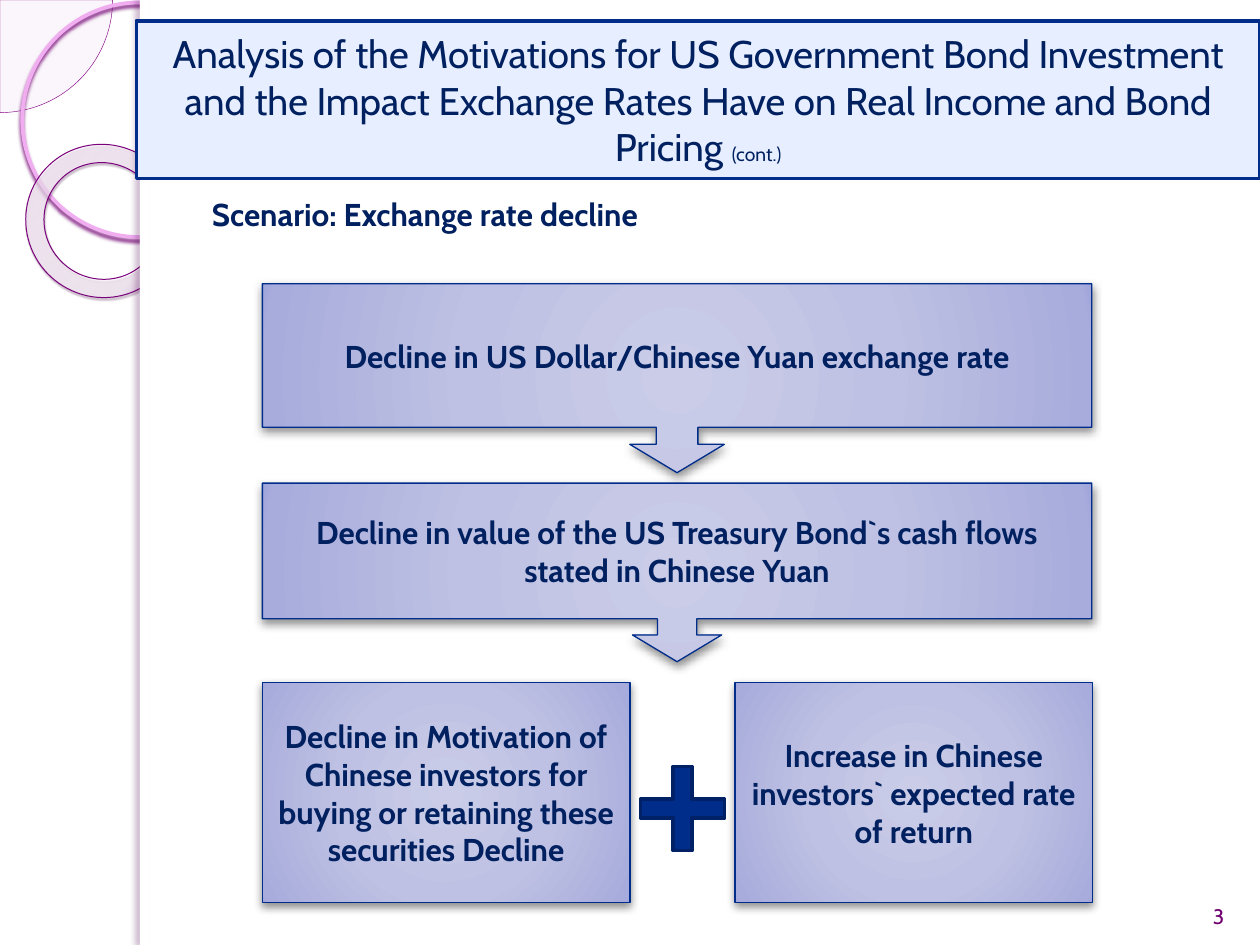
from pptx import Presentation
from pptx import util as u
from pptx.dml.color import RGBColor
from pptx.enum import shapes, text
from pptx.oxml import parse_xml
from pptx.oxml.ns import nsdecls, qn

NAVY = RGBColor(0x00, 0x20, 0x60)
BLUE = RGBColor(0x00, 0x2D, 0x89)
DARK_BLUE = RGBColor(0x00, 0x21, 0x65)
PALE_BLUE = RGBColor(0xE7, 0xEE, 0xFF)
WHITE = RGBColor(0xFF, 0xFF, 0xFF)
PALE_PINK = RGBColor(0xF5, 0xE6, 0xF5)
PINK = RGBColor(0xF0, 0xAE, 0xF0)
PURPLE = RGBColor(0x83, 0x00, 0x83)
RING_LINE = RGBColor(0x7B, 0x00, 0x7B)
PLUM = RGBColor(0x71, 0x00, 0x71)
DEEP_PLUM = RGBColor(0x38, 0x00, 0x38)
EDGE_PLUM = RGBColor(0x4C, 0x00, 0x4C)
BLACK = RGBColor(0x00, 0x00, 0x00)

BOX_STOPS = [(0, RGBColor(0xCB, 0xCD, 0xE8), 100), (50, RGBColor(0xBE, 0xC1, 0xE3), 100),
             (97, RGBColor(0xA8, 0xAC, 0xDC), 100), (100, RGBColor(0x9F, 0xA4, 0xDB), 100)]
RING_STOPS = [(0, RGBColor(0xFB, 0xEE, 0xFB), 70), (70, RGBColor(0xFE, 0xF5, 0xFE), 55),
              (100, RGBColor(0x87, 0x00, 0x87), 60)]
BOX_SHADOW = (BLACK, 43, 5, 2, 90)
FONT = "Cabin"


def add_figure(kind, place, fill=None, line=None, width=0, adjust=(), shadow=None):
    figure = page.shapes.add_shape(kind, *[u.Cm(length) for length in place])
    figure.shadow.inherit = False
    for index, value in enumerate(adjust):
        figure.adjustments[index] = value
    if fill is None:
        figure.fill.background()
    else:
        figure.fill.solid()
        figure.fill.fore_color.rgb = fill
    if line is None:
        figure.line.fill.background()
    else:
        figure.line.color.rgb = line
        figure.line.width = u.Pt(width)
    if shadow:
        color, alpha, blur, distance, angle = shadow
        figure._element.spPr.find(qn("a:effectLst")).append(parse_xml(
            f'<a:outerShdw {nsdecls("a")} blurRad="{u.Pt(blur)}" dist="{u.Pt(distance)}" '
            f'dir="{angle * 60000}" algn="ctr" rotWithShape="0"><a:srgbClr val="{color}">'
            f'<a:alpha val="{alpha * 1000}"/></a:srgbClr></a:outerShdw>'))
    return figure


def fill_radial(figure, stops, focus):
    figure.fill.gradient()
    gradient = figure._element.spPr.find(qn("a:gradFill"))
    marks = "".join(f'<a:gs pos="{position * 1000}"><a:srgbClr val="{color}">'
                    f'<a:alpha val="{alpha * 1000}"/></a:srgbClr></a:gs>'
                    for position, color, alpha in stops)
    left, top, right, bottom = [side * 1000 for side in focus]
    gradient.getparent().replace(gradient, parse_xml(
        f'<a:gradFill {nsdecls("a")} rotWithShape="1"><a:gsLst>{marks}</a:gsLst>'
        f'<a:path path="circle"><a:fillToRect l="{left}" t="{top}" r="{right}" b="{bottom}"/>'
        f'</a:path></a:gradFill>'))


deck = Presentation()
deck.slide_width, deck.slide_height = u.Cm(25.4), u.Cm(19.05)
page = deck.slides.add_slide(deck.slide_layouts[5])
kinds = shapes.MSO_SHAPE

pie = add_figure(kinds.PIE, (-2.27, -2.27, 4.54, 4.54), PALE_PINK, PURPLE, 0.25, (0, 54.02))
pie_color = pie._element.spPr.find(qn("a:solidFill")).find(qn("a:srgbClr"))
pie_color.append(parse_xml(f'<a:alpha {nsdecls("a")} val="33000"/>'))
add_figure(kinds.OVAL, (0.45, 0.05, 4.73, 4.73), None, PINK, 2.15,
           shadow=(PLUM, 85, 2, 2, 90))
ring = add_figure(kinds.DONUT, (0.51, 2.92, 3.12, 3.07), PALE_PINK, RING_LINE, 0.58, (0.12,),
                  (DEEP_PLUM, 35, 1, 1.2, 75))
ring.rotation = 38.6
fill_radial(ring, RING_STOPS, (-408, -50, 508, 150))
add_figure(kinds.RECTANGLE, (2.82, 0, 22.58, 19.05), WHITE)
add_figure(kinds.RECTANGLE, (2.82, 0, 0.2, 19.05), WHITE, shadow=(EDGE_PLUM, 25, 3, 3, 180))

title = page.shapes.title
page.shapes._spTree.append(title._element)
title.left, title.top, title.width, title.height = u.Cm(2.75), u.Cm(0.42), u.Cm(22.65), u.Cm(3.18)
title.fill.solid()
title.fill.fore_color.rgb = PALE_BLUE
title.line.color.rgb = BLUE
title.line.width = u.Pt(2)
title.text_frame.auto_size = text.MSO_AUTO_SIZE.NONE
title.text_frame.vertical_anchor = text.MSO_ANCHOR.MIDDLE
para = title.text_frame.paragraphs[0]
para.alignment = text.PP_ALIGN.CENTER
for words, size in [
    ("Analysis of the Motivations for US Government Bond Investment and the Impact "
     "Exchange Rates Have on Real Income and Bond Pricing ", 22),
    ("(cont.)", 11),
]:
    span = para.add_run()
    span.text = words
    span.font.name, span.font.size, span.font.color.rgb = FONT, u.Pt(size), NAVY

CALLOUT = (0.22, 0.25, 0.15, 0.76)
BOXES = [
    (kinds.DOWN_ARROW_CALLOUT, (5.29, 5.72, 16.72, 3.81), CALLOUT,
     "Decline in US Dollar/Chinese Yuan exchange rate"),
    (kinds.DOWN_ARROW_CALLOUT, (5.29, 9.74, 16.72, 3.6), CALLOUT,
     "Decline in value of the US Treasury Bond`s cash flows\nstated in Chinese Yuan"),
    (kinds.RECTANGLE, (5.29, 13.76, 7.41, 4.44), (),
     "Decline in Motivation of Chinese investors for buying or retaining these "
     "securities Decline"),
    (kinds.RECTANGLE, (14.82, 13.76, 7.2, 4.44), (),
     "Increase in Chinese investors` expected rate of return"),
]
for kind, place, adjust, words in BOXES:
    box = add_figure(kind, place, PALE_BLUE, BLUE, 0.75, adjust, BOX_SHADOW)
    fill_radial(box, BOX_STOPS, (50, 50, 50, 50))
    box.text_frame.text = words
    box.text_frame.word_wrap = True
    box.text_frame.vertical_anchor = text.MSO_ANCHOR.MIDDLE
    for para in box.text_frame.paragraphs:
        para.alignment = text.PP_ALIGN.CENTER
        para.font.name, para.font.size, para.font.bold = FONT, u.Pt(18), True
        para.font.color.rgb = NAVY

add_figure(kinds.CROSS, (12.91, 15.45, 1.7, 1.7), BLUE, DARK_BLUE, 2, (0.39,))

LABELS = [
    ((4.02, 3.81, 15.67, 1.02), "Scenario: Exchange rate decline", 18, True, NAVY,
     text.PP_ALIGN.LEFT, text.MSO_ANCHOR.TOP),
    ((23.93, 17.53, 1.27, 1.32), "3", 12, False, PLUM,
     text.PP_ALIGN.CENTER, text.MSO_ANCHOR.BOTTOM),
]
for place, words, size, bold, color, alignment, anchor in LABELS:
    label = page.shapes.add_textbox(*[u.Cm(length) for length in place])
    label.text_frame.text = words
    label.text_frame.word_wrap = True
    label.text_frame.vertical_anchor = anchor
    para = label.text_frame.paragraphs[0]
    para.alignment = alignment
    para.font.name, para.font.size, para.font.bold = FONT, u.Pt(size), bold
    para.font.color.rgb = color

deck.save("out.pptx")
